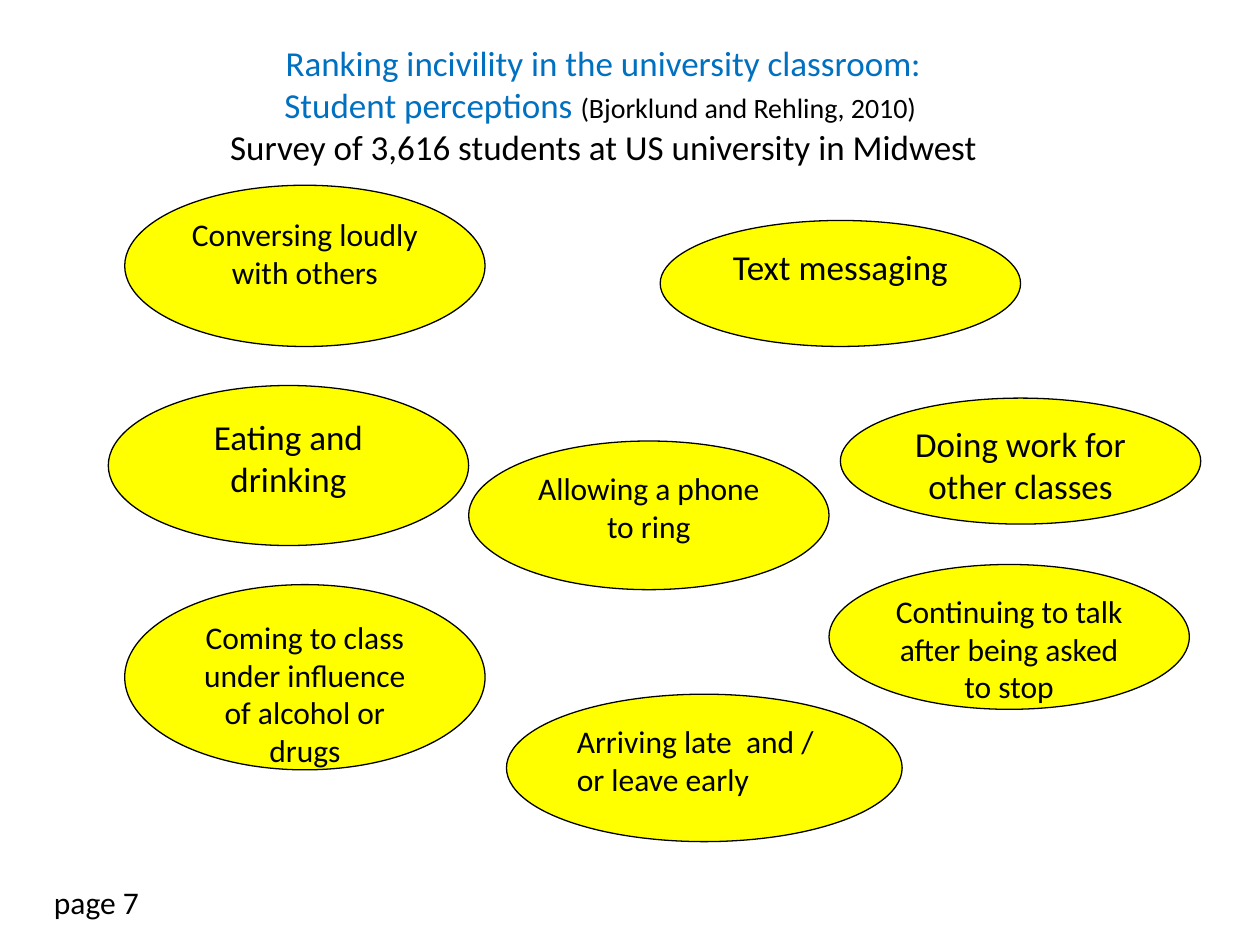
import pptx
import pptx.dml.color
import pptx.enum.shapes
import pptx.enum.text
import pptx.util

Inches = pptx.util.Inches
CENTER = pptx.enum.text.PP_ALIGN.CENTER
LEFT = pptx.enum.text.PP_ALIGN.LEFT
BLACK, BLUE, YELLOW = "000000", "0070C0", "FFFF00"


def rgb(value):
    return pptx.dml.color.RGBColor.from_string(value)


class SlideBuilder:
    """Holds the slide and its style, and adds each kind of element."""

    font = "Calibri"
    frame = {"word_wrap": True, "vertical_anchor": pptx.enum.text.MSO_ANCHOR.TOP}

    def __init__(self, prs):
        self.slide = prs.slides.add_slide(prs.slide_layouts[6])

    def fill_text(self, sp, lines, align):
        tf = sp.text_frame
        for name, value in self.frame.items():
            setattr(tf, name, value)
        p = tf.paragraphs[0]
        p.alignment = align
        for i, runs in enumerate(lines):
            if i:
                p.add_line_break()
            for text, size, color in runs:
                r = p.add_run()
                r.text = text
                style = {"name": self.font, "size": pptx.util.Pt(size)}
                for name, value in style.items():
                    setattr(r.font, name, value)
                r.font.color.rgb = rgb(color)

    def text(self, box, lines, align=LEFT):
        sp = self.slide.shapes.add_textbox(*map(Inches, box))
        self.fill_text(sp, lines, align)

    def ellipse(self, box, text, size, align=CENTER):
        sp = self.slide.shapes.add_shape(
            pptx.enum.shapes.MSO_SHAPE.OVAL, *map(Inches, box))
        sp.shadow.inherit = False
        sp.fill.solid()
        sp.fill.fore_color.rgb = rgb(YELLOW)
        sp.line.color.rgb = rgb(BLACK)
        sp.line.width = pptx.util.Pt(0.75)
        self.fill_text(sp, [[(text, size, BLACK)]], align)


def main():
    prs = pptx.Presentation()
    prs.slide_width, prs.slide_height = Inches(10), Inches(7.5)
    s = SlideBuilder(prs)

    s.text((0.33, 0.28, 8.92, 0.75), [
        [("Ranking incivility in the university classroom:", 20, BLUE)],
        [("Student perceptions ", 20, BLUE),
         ("(Bjorklund and Rehling, 2010) ", 16, BLACK)],
        [("Survey of 3,616 students at US university in Midwest", 20, BLACK)],
    ], CENTER)
    s.text((0.33, 6.96, 1.17, 0.42), [[("page 7", 18, BLACK)]])

    width = 2.86
    behaviours = [
        (0.99, 1.47, 1.28, "Conversing loudly with others", 18),
        (5.24, 1.75, 1, "Text messaging", 20),
        (0.86, 3.06, 1.27, "Eating and drinking", 20),
        (3.72, 3.5, 1.18, "Allowing a phone to ring", 18),
        (6.58, 4.48, 1.15, "Continuing to talk after being asked to stop", 18),
        (0.99, 4.64, 1.47,
         "Coming to class under influence of alcohol or drugs", 18),
        (6.67, 3.16, 1, "Doing work for other classes", 20),
    ]
    for left, top, height, text, size in behaviours:
        s.ellipse((left, top, width, height), text, size)
    s.ellipse((4.02, 5.51, 3.14, 1.17),
              "Arriving late  and / or leave early", 18, LEFT)

    prs.save("out.pptx")


if __name__ == "__main__":
    main()
